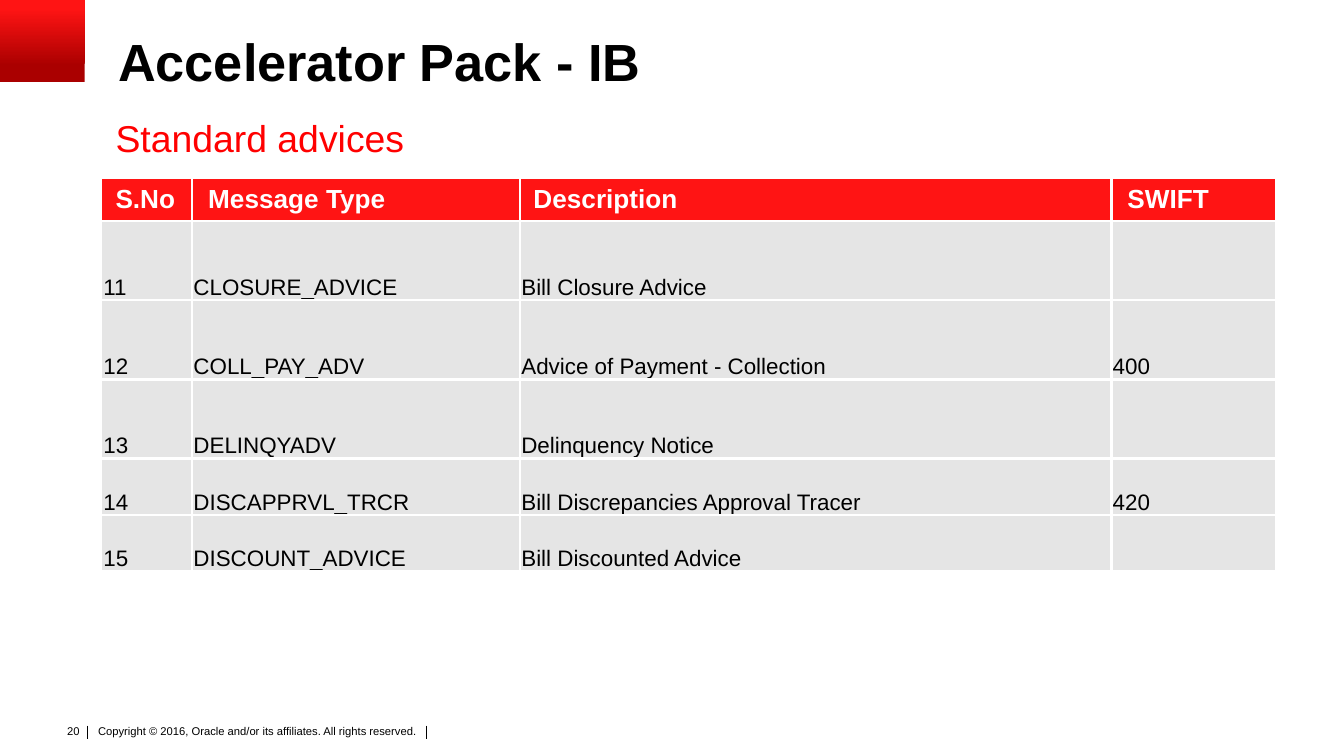
from lxml.etree import SubElement
from pptx import Presentation
from pptx.dml.color import RGBColor
from pptx.enum.shapes import MSO_CONNECTOR, MSO_SHAPE
from pptx.enum.text import MSO_ANCHOR, PP_ALIGN
from pptx.oxml.ns import qn
from pptx.util import Inches, Pt

COLORS = {
    "black": "000000",
    "white": "FFFFFF",
    "red": "FF0000",
    "header": "FF1414",
    "dark_red": "AA0000",
    "row": "E5E5E5",
}
FONT = "Arial"
COLUMNS = [0.67, 2.44, 4.4, 1.22]
ROWS = [0.31, 0.59, 0.59, 0.59, 0.42, 0.42]
HEADER_INSETS = [0.1, 0.12, 0.1, 0.12]
ADVICES = [
    ("S.No", "Message Type", "Description", "SWIFT"),
    ("11", "CLOSURE_ADVICE", "Bill Closure Advice", ""),
    ("12", "COLL_PAY_ADV", "Advice of Payment - Collection", "400"),
    ("13", "DELINQYADV", "Delinquency Notice", ""),
    ("14", "DISCAPPRVL_TRCR", "Bill Discrepancies Approval Tracer", "420"),
    ("15", "DISCOUNT_ADVICE", "Bill Discounted Advice", ""),
]


def rgb(name):
    return RGBColor.from_string(COLORS[name])


def style_font(font, size, color, bold=False):
    font.name = FONT
    font.size = Pt(size)
    font.bold = bold
    font.color.rgb = rgb(color)


def set_margins(target, left, top, right, bottom):
    target.margin_left = Inches(left)
    target.margin_top = Inches(top)
    target.margin_right = Inches(right)
    target.margin_bottom = Inches(bottom)


def add_text(s, box, text, size, color, bold=False, insets=(0, 0, 0, 0)):
    tf = s.shapes.add_textbox(*map(Inches, box)).text_frame
    tf.word_wrap = True
    set_margins(tf, *insets)
    p = tf.paragraphs[0]
    r = p.add_run()
    r.text = text
    style_font(r.font, size, color, bold)
    return p


def add_corner(s, x, y, w, h):
    sp = s.shapes.add_shape(MSO_SHAPE.RECTANGLE, *map(Inches, (x, y, w, h)))
    sp.shadow.inherit = False
    sp.line.fill.background()
    sp.fill.gradient()
    sp.fill.gradient_angle = 90
    stops = [(0.2, "dark_red"), (0.9, "header")]
    for stop, (position, color) in zip(sp.fill.gradient_stops, stops):
        stop.position = position
        stop.color.rgb = rgb(color)


def add_headings(s, x, y, w):
    add_text(s, (x, y + 0.59, w, 0.33), "Standard advices", 20, "red")
    p = add_text(s, (x + 0.02, y, w - 0.5, 0.83), "Accelerator Pack - IB",
                 28, "black", bold=True)
    p.line_spacing = 0.9


def add_separator(s, x, y, h):
    line = s.shapes.add_connector(
        MSO_CONNECTOR.STRAIGHT, *map(Inches, (x, y, x, y + h)))
    line.line.color.rgb = rgb("black")
    line.line.width = Pt(0.5)
    SubElement(line._element.spPr, qn("a:effectLst"))


def add_footer(s, x, y):
    add_text(s, (x + 0.3, y + 0.03, 2.74, 0.24),
             "Copyright © 2016, Oracle and/or its affiliates. All rights reserved.",
             6, "black", insets=(0.04, 0.02, 0.04, 0.02))
    for offset in (0.26, 2.78):
        add_separator(s, x + offset, y + 0.06, 0.1)
    p = add_text(s, (x, y, 0.3, 0.2), "20", 6, "black",
                 insets=(0.1, 0.05, 0.1, 0.05))
    p.alignment = PP_ALIGN.RIGHT


def add_borders(cell, i, j):
    tcPr = cell._tc.get_or_add_tcPr()
    sides = {"lnL": j > 0, "lnR": j < len(COLUMNS) - 1, "lnT": i > 0, "lnB": True}
    for k, (side, drawn) in enumerate(sides.items()):
        ln = SubElement(tcPr, qn(f"a:{side}"), w=str(Pt(1.5)))
        if drawn:
            fill = SubElement(ln, qn("a:solidFill"))
            SubElement(fill, qn("a:srgbClr"), val=COLORS["white"])
        else:
            SubElement(ln, qn("a:noFill"))
        tcPr.insert(k, ln)


def fill_cell(cell, text, header, inset):
    cell.fill.solid()
    cell.fill.fore_color.rgb = rgb("header" if header else "row")
    p = cell.text_frame.paragraphs[0]
    if header:
        cell.vertical_anchor = MSO_ANCHOR.MIDDLE
        set_margins(cell, inset, 0.04, 0.1, 0.04)
        size, color = 14, "white"
    else:
        cell.vertical_anchor = MSO_ANCHOR.BOTTOM
        set_margins(cell, 0.01, 0.01, 0.01, 0)
        size, color = 12, "black"
    if text:
        r = p.add_run()
        r.text = text
        style_font(r.font, size, color, header)


def add_advice_table(s, x, y):
    box = (x, y, sum(COLUMNS), sum(ROWS))
    table = s.shapes.add_table(
        len(ROWS), len(COLUMNS), *map(Inches, box)).table
    table.horz_banding = False
    for column, width in zip(table.columns, COLUMNS):
        column.width = Inches(width)
    for i, (height, texts) in enumerate(zip(ROWS, ADVICES)):
        table.rows[i].height = Inches(height)
        for j, (text, inset) in enumerate(zip(texts, HEADER_INSETS)):
            cell = table.cell(i, j)
            fill_cell(cell, text, i == 0, inset)
            add_borders(cell, i, j)


def main():
    prs = Presentation()
    prs.slide_width = Inches(10)
    prs.slide_height = prs.slide_width * 9 // 16
    s = prs.slides.add_slide(prs.slide_layouts[6])
    add_footer(s, 0.39, 5.34)
    add_corner(s, 0, 0, 0.63, 0.61)
    add_headings(s, 0.86, 0.27, 9)
    add_advice_table(s, 0.76, 1.33)
    prs.save("out.pptx")


if __name__ == "__main__":
    main()
